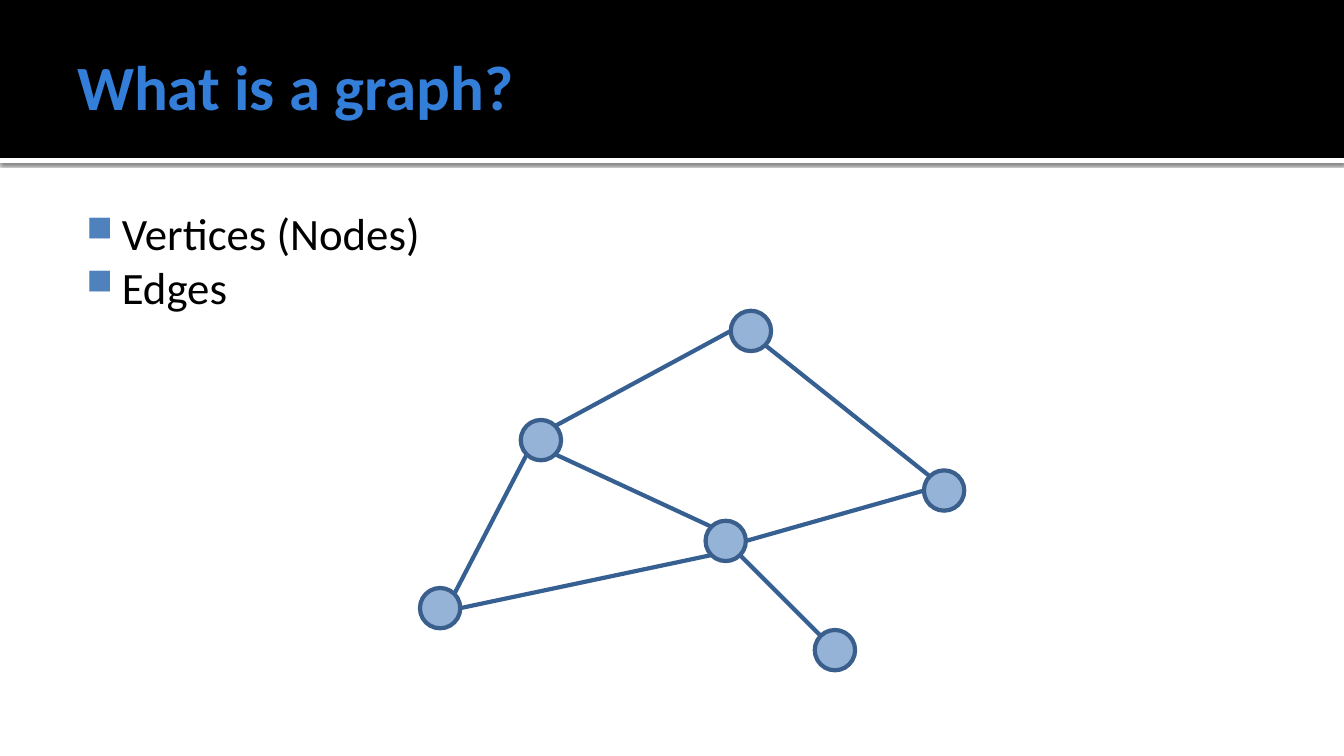
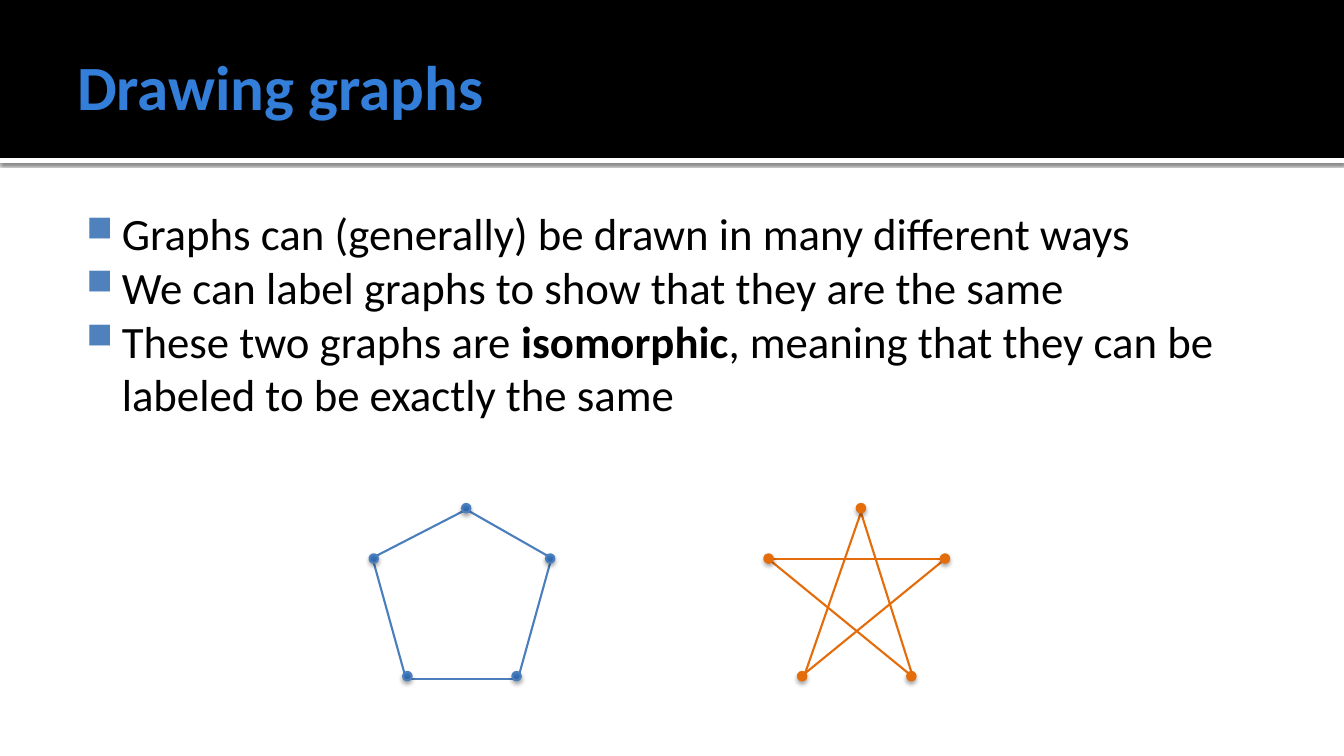
from dataclasses import dataclass

import pptx
import pptx.dml.color
import pptx.enum.shapes
import pptx.enum.text
import pptx.oxml.ns
import pptx.util
from lxml import etree

PX = 7620  # EMU; 120 px to the inch
SLIDE_WIDTH, SLIDE_HEIGHT = 1600, 900
MARGIN, TEXT_WIDTH = 80, 1440
BAND_HEIGHT, STRIP_HEIGHT = 188, 6


@dataclass(frozen=True)
class Theme:
    font: str = "Calibri"
    title_size: int = 45
    body_size: int = 32
    title: str = "337ED9"
    text: str = "000000"
    band: str = "000000"
    strip: str = "FFFFFF"
    bullet: str = "4F81BD"
    bullet_percent: int = 80
    # Shadows: opacity in percent, blur and distance in points
    strip_shadow: tuple = (60, 2.5, 0.8)
    dot_shadow: tuple = (35, 3.1, 1.8)


@dataclass(frozen=True)
class Graph:
    """Vertices are top left corners; an edge is (vertex, side, vertex, side)."""
    diameter: int
    vertices: dict
    edges: list
    fill: tuple
    outline: str
    edge_color: str
    line_width: float
    shadow: tuple = ()


theme = Theme()
color = pptx.dml.color.RGBColor.from_string
qn = pptx.oxml.ns.qn
OVAL = pptx.enum.shapes.MSO_SHAPE.OVAL
RECTANGLE = pptx.enum.shapes.MSO_SHAPE.RECTANGLE
STRAIGHT = pptx.enum.shapes.MSO_CONNECTOR.STRAIGHT

# Points on a circle's rim, as shares of its diameter
NEAR, FAR = 0.15, 0.85
RIM = {
    "N": (0.5, 0), "NE": (FAR, NEAR), "E": (1, 0.5), "SE": (FAR, FAR),
    "S": (0.5, 1), "SW": (NEAR, FAR), "W": (0, 0.5), "NW": (NEAR, NEAR),
}

network = Graph(
    diameter=48,
    vertices={"a": (620, 500), "b": (870, 370), "c": (840, 620),
              "d": (1100, 560), "e": (500, 700), "f": (970, 750)},
    edges=[("a", "NE", "b", "W"), ("a", "SW", "e", "NE"), ("b", "SE", "d", "NW"),
           ("d", "W", "c", "E"), ("a", "SE", "c", "NW"), ("e", "E", "c", "SW"),
           ("c", "SE", "f", "NW")],
    fill=("95B3D7",), outline="3A5F8C", edge_color="376092", line_width=3,
)
pentagon = Graph(
    diameter=10,
    vertices={"top": (550, 600), "right": (650, 660), "bottom right": (610, 800),
              "bottom left": (480, 800), "left": (440, 660)},
    edges=[("left", "NE", "top", "SW"), ("top", "SE", "right", "NW"),
           ("right", "S", "bottom right", "NE"),
           ("bottom right", "SW", "bottom left", "SE"),
           ("bottom left", "NW", "left", "S")],
    fill=("2F5F99", "3A7CCB"), outline="4B7EBC", edge_color="4B7EBC",
    line_width=1.5, shadow=theme.dot_shadow,
)
STAR_OFFSET = 470
star = Graph(
    diameter=10,
    vertices={name: (x + STAR_OFFSET, y) for name, (x, y) in pentagon.vertices.items()},
    edges=[("bottom left", "NE", "top", "S"), ("top", "S", "bottom right", "N"),
           ("left", "E", "right", "W"), ("left", "SE", "bottom right", "NW"),
           ("bottom left", "NE", "right", "SW")],
    fill=("E46C0A",), outline="E46C0A", edge_color="E46C0A",
    line_width=1.5, shadow=theme.dot_shadow,
)

# Title, body height, bullets made of (text, bold) runs, graphs
SLIDES = [
    ("What is a graph?", 607,
     [[("Vertices (Nodes)", False)], [("Edges", False)]],
     [network]),
    ("Drawing graphs", 358,
     [[("Graphs can (generally) be drawn in many different ways", False)],
      [("We can label graphs to show that they are the same", False)],
      [("These two graphs are ", False), ("isomorphic", True),
       (", meaning that they can be labeled to be exactly the same", False)]],
     [pentagon, star]),
]


def add_filled_shape(shapes, kind, box, colors, shadow=()):
    """Add a shape without outline; two colours make an upward gradient."""
    shape = shapes.add_shape(kind, *(value * PX for value in box))
    if len(colors) == 1:
        shape.fill.solid()
        shape.fill.fore_color.rgb = color(colors[0])
    else:
        shape.fill.gradient()
        shape.fill.gradient_angle = 90
        for stop, value in zip(shape.fill.gradient_stops, colors):
            stop.color.rgb = color(value)
    shape.line.fill.background()
    shape.shadow.inherit = False
    if shadow:
        opacity, blur, distance = shadow
        effects = shape.element.spPr.find(qn("a:effectLst"))
        outer = etree.SubElement(
            effects, qn("a:outerShdw"), blurRad=str(pptx.util.Pt(blur)),
            dist=str(pptx.util.Pt(distance)), dir="5400000", rotWithShape="0")
        black = etree.SubElement(outer, qn("a:srgbClr"), val="000000")
        etree.SubElement(black, qn("a:alpha"), val=str(opacity * 1000))
    return shape


def add_text(slide, box, insets, paragraphs, size, text_color, bulleted=False):
    """Add a text box and return its frame; insets are left, top, right, bottom."""
    frame = slide.shapes.add_textbox(*(value * PX for value in box)).text_frame
    frame.word_wrap = True
    (frame.margin_left, frame.margin_top,
     frame.margin_right, frame.margin_bottom) = (value * PX for value in insets)
    for index, runs in enumerate(paragraphs):
        paragraph = frame.add_paragraph() if index else frame.paragraphs[0]
        if bulleted:
            properties = paragraph._p.get_or_add_pPr()
            properties.set("marL", str(58 * PX))
            properties.set("indent", str(-42 * PX))
            bullet_color = etree.SubElement(properties, qn("a:buClr"))
            etree.SubElement(bullet_color, qn("a:srgbClr"), val=theme.bullet)
            etree.SubElement(properties, qn("a:buSzPct"), val=str(theme.bullet_percent * 1000))
            etree.SubElement(properties, qn("a:buChar"), char="■")
        for text, bold in runs:
            run = paragraph.add_run()
            run.text = text
            run.font.name = theme.font
            run.font.size = pptx.util.Pt(size)
            run.font.bold = bold
            run.font.color.rgb = color(text_color)
    return frame


presentation = pptx.Presentation()
presentation.slide_width = SLIDE_WIDTH * PX
presentation.slide_height = SLIDE_HEIGHT * PX

for title, body_height, bullets, graphs in SLIDES:
    slide = presentation.slides.add_slide(presentation.slide_layouts[6])
    add_filled_shape(slide.shapes, RECTANGLE, (0, BAND_HEIGHT, SLIDE_WIDTH, STRIP_HEIGHT),
                     (theme.strip,), theme.strip_shadow)
    add_filled_shape(slide.shapes, RECTANGLE, (0, 0, SLIDE_WIDTH, BAND_HEIGHT), (theme.band,))
    title_frame = add_text(slide, (MARGIN, 20, TEXT_WIDTH, 164), (12, 6, 6, 6),
                           [[(title, True)]], theme.title_size, theme.title)
    title_frame.vertical_anchor = pptx.enum.text.MSO_ANCHOR.MIDDLE
    add_text(slide, (MARGIN, 233, TEXT_WIDTH, body_height), (7, 12, 12, 6),
             bullets, theme.body_size, theme.text, bulleted=True)

    for graph in graphs:
        group = slide.shapes.add_group_shape()
        for start, start_side, end, end_side in graph.edges:
            ends = [round((corner + share * graph.diameter) * PX)
                    for vertex, side in ((start, start_side), (end, end_side))
                    for corner, share in zip(graph.vertices[vertex], RIM[side])]
            edge = group.shapes.add_connector(STRAIGHT, *ends)
            edge.line.color.rgb = color(graph.edge_color)
            edge.line.width = pptx.util.Pt(graph.line_width)
            etree.SubElement(edge.element.spPr, qn("a:effectLst"))
        for corner in graph.vertices.values():
            node = add_filled_shape(group.shapes, OVAL, (*corner, graph.diameter, graph.diameter),
                                    graph.fill, graph.shadow)
            node.line.color.rgb = color(graph.outline)
            node.line.width = pptx.util.Pt(graph.line_width)

presentation.save("out.pptx")
